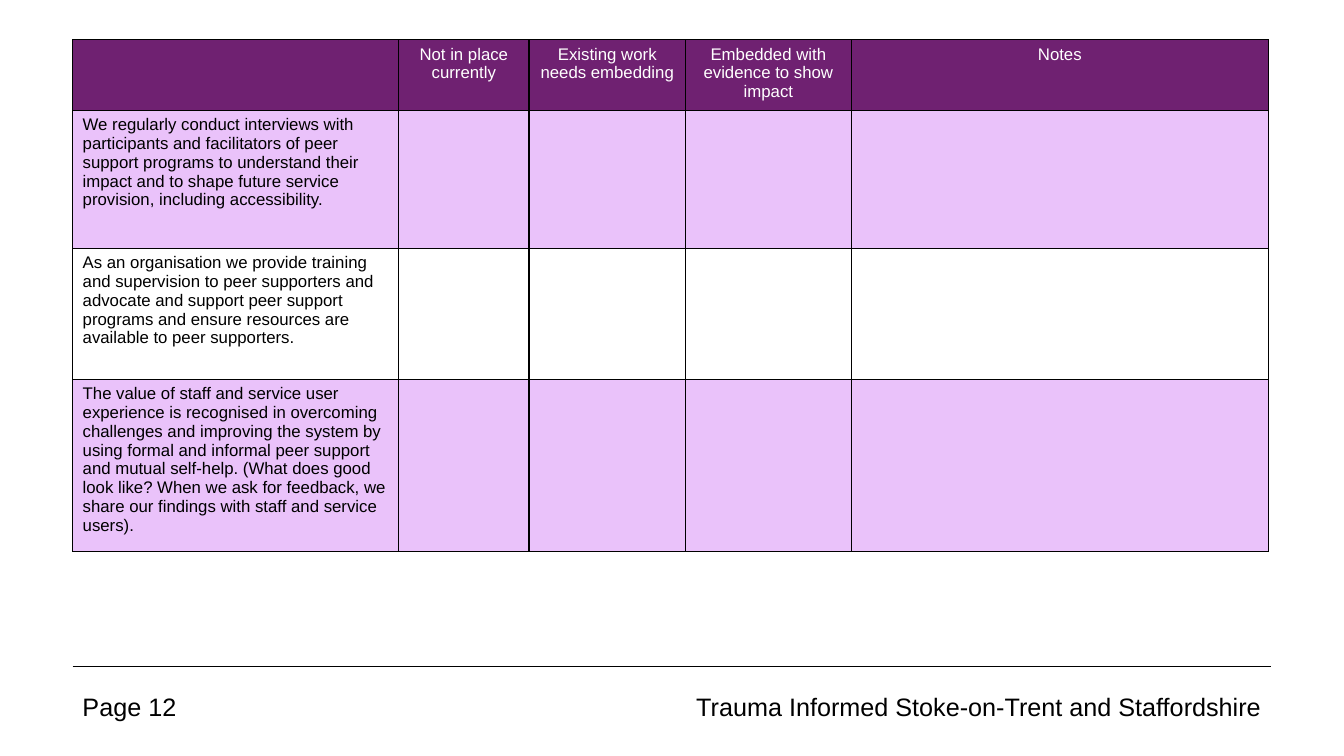
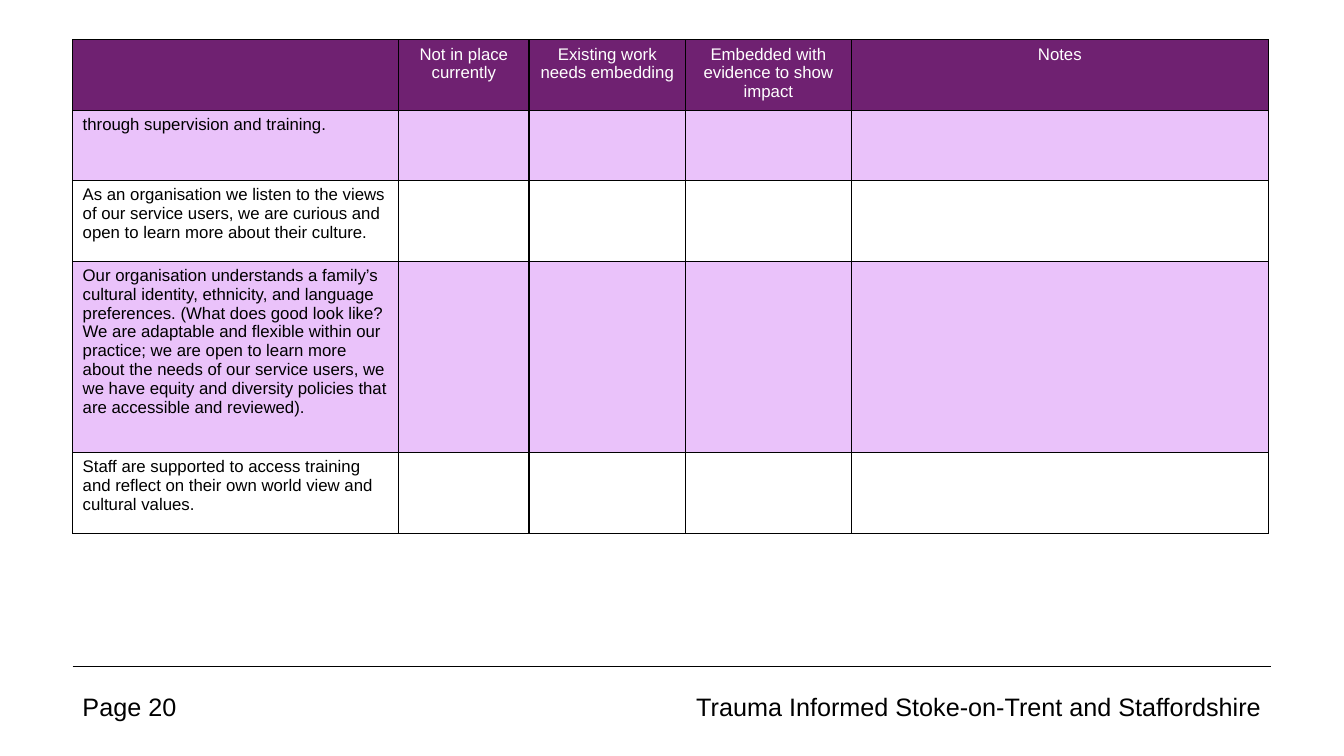
import pptx
import pptx.dml.color
import pptx.enum.shapes
import pptx.enum.text
import pptx.oxml
import pptx.oxml.ns
import pptx.util

Cm = pptx.util.Cm
Pt = pptx.util.Pt
ALIGN = pptx.enum.text.PP_ALIGN

PURPLE, LILAC, WHITE, BLACK = "6F2171", "EAC2FA", "FFFFFF", "000000"
TABLE_BOX = (1.83, 1.0, 30.14)
FOOTER_BOX = (1.83, 16.79, 30.2)
COLUMN_SHARES = (8.22, 3.28, 3.95, 4.17, 10.52)
HEADER_HEIGHT = 1.78
HEADINGS = (
    "",
    "Not in place currently",
    "Existing work needs embedding",
    "Embedded with evidence to show impact",
    "Notes",
)
FOOTER_TEXT = "Trauma Informed Stoke-on-Trent and Staffordshire"
HEADING = {"size": Pt(12), "name": "Arial", "color": WHITE}
BODY = {**HEADING, "color": BLACK}
FOOTER = {**BODY, "size": Pt(18)}

PAGES = {
    12: [
        (3.48, "We regularly conduct interviews with participants and facilitators of peer "
               "support programs to understand their impact and to shape future service "
               "provision, including accessibility."),
        (3.3, "As an organisation we provide training and supervision to peer supporters and "
              "advocate and support peer support programs and ensure resources are available "
              "to peer supporters."),
        (4.34, "The value of staff and service user experience is recognised in overcoming "
               "challenges and improving the system by using formal and informal peer support "
               "and mutual self-help. (What does good look like? When we ask for feedback, we "
               "share our findings with staff and service users)."),
    ],
    20: [
        (1.76, "through supervision and training."),
        (2.04, "As an organisation we listen to the views of our service users, we are curious "
               "and open to learn more about their culture."),
        (4.82, "Our organisation understands a family’s cultural identity, ethnicity, and "
               "language preferences. (What does good look like? We are adaptable and flexible "
               "within our practice; we are open to learn more about the needs of our service "
               "users, we we have equity and diversity policies that are accessible and "
               "reviewed)."),
        (2.04, "Staff are supported to access training and reflect on their own world view and "
               "cultural values."),
    ],
}


def rgb(value):
    """Return the colour for a hex string."""
    return pptx.dml.color.RGBColor.from_string(value)


def write(tf, text, style, align):
    """Put one formatted paragraph in a text frame."""
    p = tf.paragraphs[0]
    p.alignment = align
    r = p.add_run()
    r.text = text
    for key, value in style.items():
        if key == "color":
            r.font.color.rgb = rgb(value)
        else:
            setattr(r.font, key, value)


def add_borders(cell, color, width):
    """Draw a solid border on the four sides of a cell."""
    tcPr = cell._tc.get_or_add_tcPr()
    for side in ("lnL", "lnR", "lnT", "lnB"):
        tcPr.append(pptx.oxml.parse_xml(
            f'<a:{side} {pptx.oxml.ns.nsdecls("a")} w="{width}"><a:solidFill>'
            f'<a:srgbClr val="{color}"/></a:solidFill></a:{side}>'))


def add_checklist(s, box, entries):
    """Add the self-assessment table at the top left of its box."""
    left, top, width = box
    rows = [(HEADER_HEIGHT, HEADINGS)]
    rows += [(height, (text, "", "", "", "")) for height, text in entries]
    total = sum(height for height, _ in rows)
    table = s.shapes.add_table(len(rows), len(HEADINGS), Cm(left), Cm(top),
                               Cm(width), Cm(total)).table
    for column, share in zip(table.columns, COLUMN_SHARES):
        column.width = Cm(width * share / sum(COLUMN_SHARES))
    for i, (height, texts) in enumerate(rows):
        table.rows[i].height = Cm(height)
        fill = PURPLE if i == 0 else (WHITE, LILAC)[i % 2]
        style, align = (BODY, ALIGN.LEFT) if i else (HEADING, ALIGN.CENTER)
        for cell, text in zip(table.rows[i].cells, texts):
            add_borders(cell, BLACK, Pt(1))
            cell.fill.solid()
            cell.fill.fore_color.rgb = rgb(fill)
            if text:
                write(cell.text_frame, text, style, align)


def add_footer(s, box, number):
    """Add the rule, page number and document name across the box."""
    left, top, width = box
    line = s.shapes.add_connector(pptx.enum.shapes.MSO_CONNECTOR.STRAIGHT,
                                  Cm(left), Cm(top), Cm(left + width), Cm(top))
    line.line.color.rgb = rgb(BLACK)
    line.line.width = Pt(0.5)
    line._element.spPr.append(
        pptx.oxml.parse_xml(f'<a:effectLst {pptx.oxml.ns.nsdecls("a")}/>'))
    name_width = 14.9
    parts = (
        (left, 3.05, f"Page {number}", ALIGN.LEFT),
        (left + width - name_width, name_width, FOOTER_TEXT, ALIGN.RIGHT),
    )
    for x, w, text, align in parts:
        tf = s.shapes.add_textbox(Cm(x), Cm(top + 0.51), Cm(w), Cm(1.03)).text_frame
        tf.word_wrap = True
        write(tf, text, FOOTER, align)


def main():
    """Build and save the presentation."""
    prs = pptx.Presentation()
    prs.slide_width, prs.slide_height = Cm(33.87), Cm(19.05)
    for number, entries in PAGES.items():
        s = prs.slides.add_slide(prs.slide_layouts[6])
        add_checklist(s, TABLE_BOX, entries)
        add_footer(s, FOOTER_BOX, number)
    prs.save("out.pptx")


if __name__ == "__main__":
    main()
